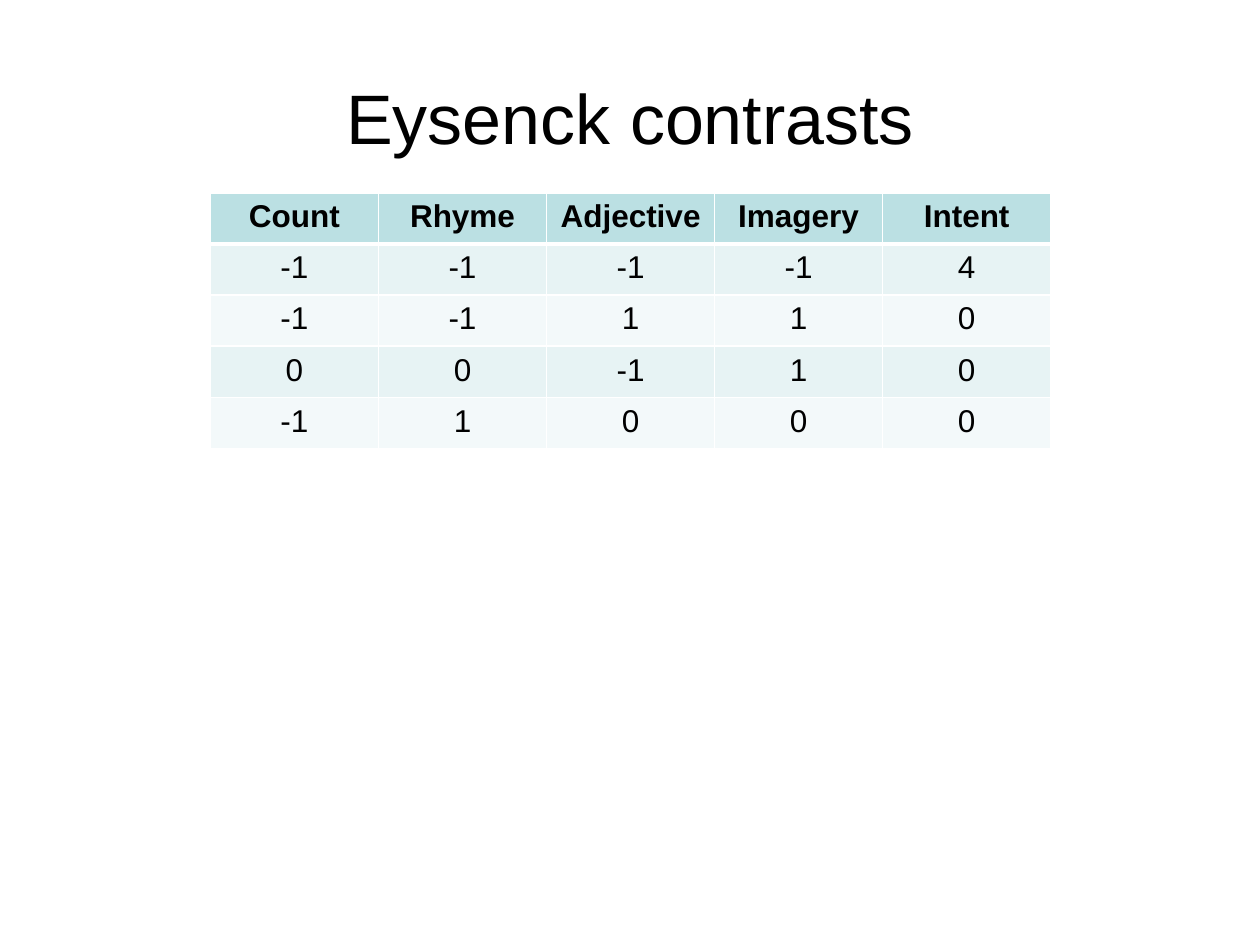
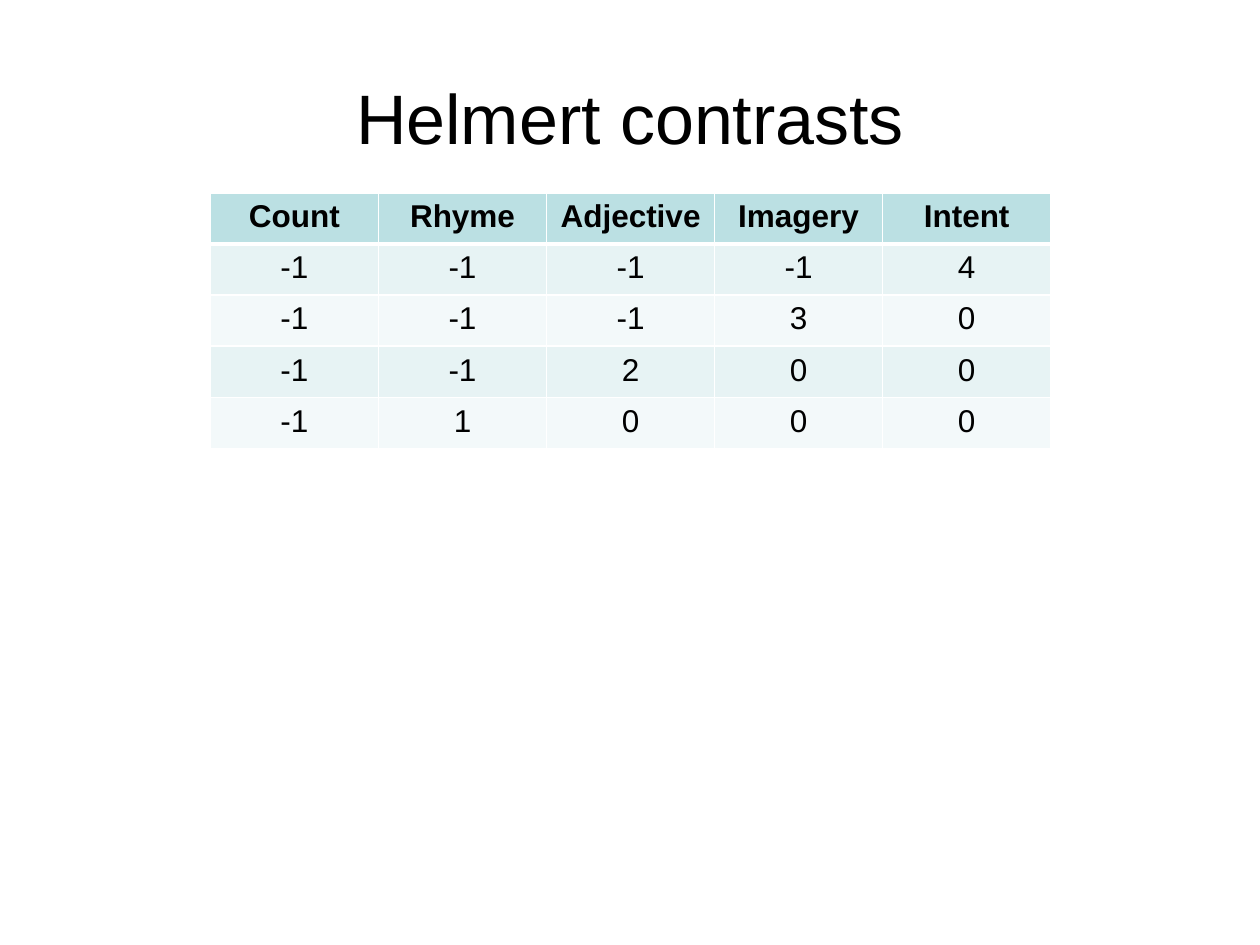
from dataclasses import dataclass

from lxml.etree import SubElement
from pptx import Presentation
from pptx.dml.color import RGBColor
from pptx.enum.text import MSO_ANCHOR, PP_ALIGN
from pptx.oxml.ns import qn
from pptx.util import Inches, Pt

HEADERS = ["Count", "Rhyme", "Adjective", "Imagery", "Intent"]
CONTRASTS = {
    "Eysenck contrasts": [
        (-1, -1, -1, -1, 4),
        (-1, -1, 1, 1, 0),
        (0, 0, -1, 1, 0),
        (-1, 1, 0, 0, 0),
    ],
    "Helmert contrasts": [
        (-1, -1, -1, -1, 4),
        (-1, -1, -1, 3, 0),
        (-1, -1, 2, 0, 0),
        (-1, 1, 0, 0, 0),
    ],
}


@dataclass(frozen=True)
class Theme:
    font: str = "Arial"
    text: str = "000000"
    border: str = "FFFFFF"
    header_fill: str = "BBE0E3"
    band_fills: tuple = ("E7F3F4", "F3F9FA")
    title_size: int = 40
    table_size: int = 18
    thin: int = 1
    thick: int = 3


THEME = Theme()
TITLE_BOX = [Inches(n) for n in (0.5, 0.3, 9, 1.25)]
TABLE_LEFT, TABLE_TOP = Inches(1.67), Inches(1.53)
TABLE_WIDTH, TABLE_HEIGHT = Inches(6.67), Inches(2.03)


def format_paragraph(p, size, bold=False):
    p.alignment = PP_ALIGN.CENTER
    p.font.name = THEME.font
    p.font.size = Pt(size)
    p.font.bold = bold
    p.font.color.rgb = RGBColor.from_string(THEME.text)


def add_title(slide, text):
    title = slide.shapes.title
    title.left, title.top, title.width, title.height = TITLE_BOX
    tf = title.text_frame
    tf.text = text
    tf.vertical_anchor = MSO_ANCHOR.MIDDLE
    format_paragraph(tf.paragraphs[0], THEME.title_size)


def set_borders(cell, row):
    """Draw thin borders, with a thick rule between header and body."""
    widths = {
        "a:lnL": THEME.thin,
        "a:lnR": THEME.thin,
        "a:lnT": THEME.thick if row == 1 else THEME.thin,
        "a:lnB": THEME.thick if row == 0 else THEME.thin,
    }
    tc_pr = cell._tc.get_or_add_tcPr()
    for tag, width in widths.items():
        ln = SubElement(tc_pr, qn(tag), w=str(Pt(width)))
        fill = SubElement(ln, qn("a:solidFill"))
        SubElement(fill, qn("a:srgbClr"), val=THEME.border)


def add_contrast_table(slide, contrasts):
    rows = [HEADERS, *contrasts]
    table = slide.shapes.add_table(
        len(rows), len(HEADERS), TABLE_LEFT, TABLE_TOP, TABLE_WIDTH, TABLE_HEIGHT
    ).table
    for r, values in enumerate(rows):
        color = THEME.band_fills[(r - 1) % 2] if r else THEME.header_fill
        for c, value in enumerate(values):
            cell = table.cell(r, c)
            cell.text = str(value)
            format_paragraph(cell.text_frame.paragraphs[0], THEME.table_size, bold=r == 0)
            set_borders(cell, r)
            cell.fill.solid()
            cell.fill.fore_color.rgb = RGBColor.from_string(color)


def main():
    prs = Presentation()
    prs.slide_width, prs.slide_height = Inches(10), Inches(7.5)
    title_only = prs.slide_layouts[5]
    for title, contrasts in CONTRASTS.items():
        slide = prs.slides.add_slide(title_only)
        add_title(slide, title)
        add_contrast_table(slide, contrasts)
    prs.save("out.pptx")


if __name__ == "__main__":
    main()
